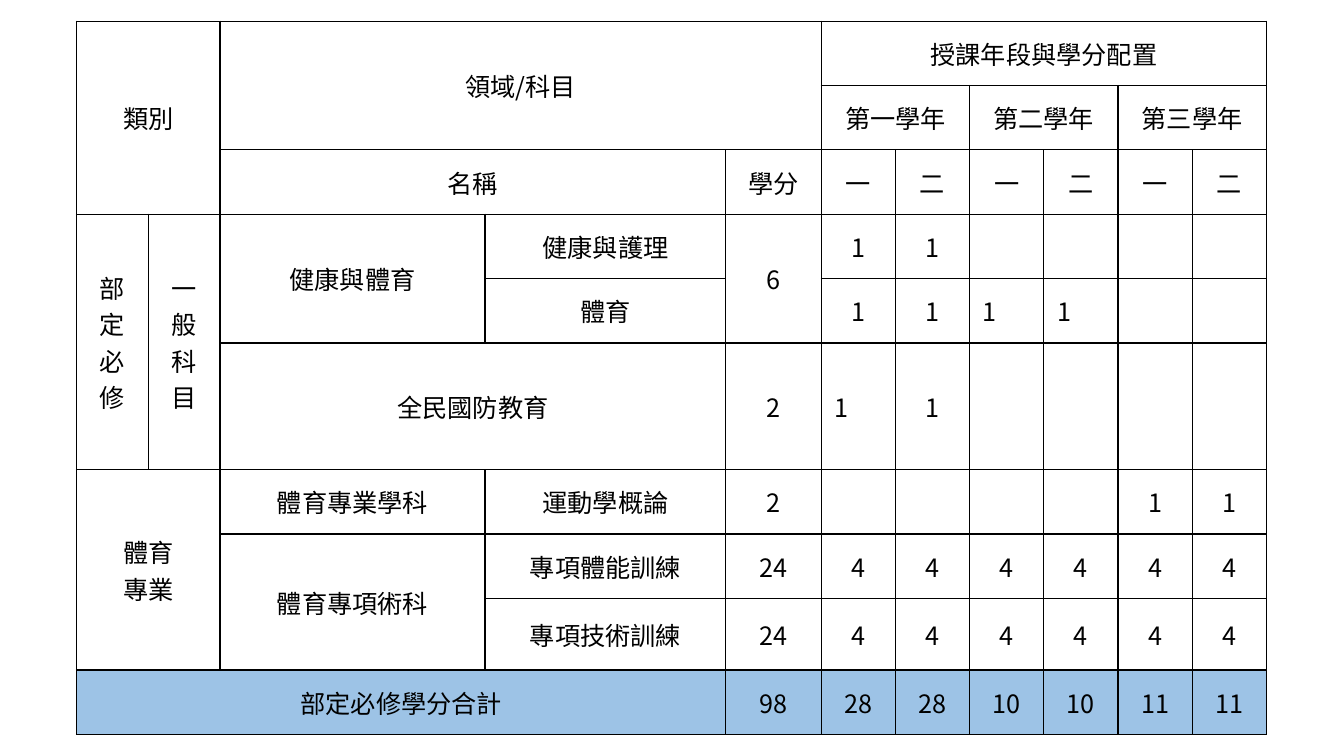
from lxml import etree
from pptx import Presentation
from pptx.dml.color import RGBColor
from pptx.enum.text import MSO_ANCHOR, PP_ALIGN
from pptx.oxml.ns import qn
from pptx.util import Pt

CENTER = PP_ALIGN.CENTER
MIDDLE = MSO_ANCHOR.MIDDLE
FONT = "Noto Sans CJK SC"
COLORS = {"text": "000000", "border": "000000", "total": "9DC3E6"}

COLUMN_WIDTHS = [51.2, 51.2, 189.4, 172, 68.2] + [53] * 6
ROW_HEIGHTS = [46] * 5 + [90.5, 46, 46, 51.2, 46]

# Each row: category, group, field, subject, credits, then six terms
ROWS = [
    ["類別", "", "領域/科目", "", "", "授課年段與學分配置", "", "", "", "", ""],
    ["", "", "", "", "", "第一學年", "", "第二學年", "", "第三學年", ""],
    ["", "", "名稱", "", "學分"] + ["一", "二"] * 3,
    ["部\n定\n必\n修", "一\n般\n科\n目", "健康與體育", "健康與護理", "6", "1", "1", "", "", "", ""],
    ["", "", "", "體育", "", "1", "1", "1", "1", "", ""],
    ["", "", "全民國防教育", "", "2", "1", "1", "", "", "", ""],
    ["體育\n專業", "", "體育專業學科", "運動學概論", "2", "", "", "", "", "1", "1"],
    ["", "", "體育專項術科", "專項體能訓練", "24"] + ["4"] * 6,
    ["", "", "", "專項技術訓練", "24"] + ["4"] * 6,
    ["部定必修學分合計", "", "", "", "98", "28", "28", "10", "10", "11", "11"],
]

# First row, first column, last row, last column
MERGES = [
    (0, 0, 2, 1), (0, 2, 1, 4), (0, 5, 0, 10),
    (1, 5, 1, 6), (1, 7, 1, 8), (1, 9, 1, 10),
    (2, 2, 2, 3), (3, 0, 5, 0), (3, 1, 5, 1), (3, 2, 4, 2), (3, 4, 4, 4),
    (5, 2, 5, 3), (6, 0, 8, 1), (7, 2, 8, 2), (9, 0, 9, 3),
]
LEFT_SHIFTED = {(4, 7), (4, 8), (5, 5)}
TOTAL_ROW = len(ROWS) - 1


def add_borders(cell):
    properties = cell._tc.get_or_add_tcPr()
    for index, side in enumerate(("lnL", "lnR", "lnT", "lnB")):
        line = etree.Element(qn(f"a:{side}"), w=str(Pt(1)))
        fill = etree.SubElement(line, qn("a:solidFill"))
        etree.SubElement(fill, qn("a:srgbClr"), val=COLORS["border"])
        properties.insert(index, line)


def style_paragraph(paragraph):
    paragraph.alignment = CENTER
    paragraph.font.size = Pt(18)
    paragraph.font.color.rgb = RGBColor.from_string(COLORS["text"])
    paragraph.font.name = FONT
    defaults = paragraph._p.pPr.find(qn("a:defRPr"))
    etree.SubElement(defaults, qn("a:ea"), typeface=FONT)


# Page
deck = Presentation()
deck.slide_width, deck.slide_height = Pt(960), Pt(540)
page = deck.slides.add_slide(deck.slide_layouts[6])

# Curriculum table
frame = page.shapes.add_table(
    len(ROWS), len(COLUMN_WIDTHS), Pt(54.7), Pt(15.1),
    Pt(sum(COLUMN_WIDTHS)), Pt(sum(ROW_HEIGHTS)))
table = frame.table
table.first_row = False
table.horz_banding = False
for column, width in zip(table.columns, COLUMN_WIDTHS):
    column.width = Pt(width)
for row, height in zip(table.rows, ROW_HEIGHTS):
    row.height = Pt(height)

# Cell text, fill and borders
for row_index, texts in enumerate(ROWS):
    for column_index, text in enumerate(texts):
        cell = table.cell(row_index, column_index)
        cell.text = text
        cell.vertical_anchor = MIDDLE
        cell.margin_left = cell.margin_right = cell.margin_top = cell.margin_bottom = 0
        if (row_index, column_index) in LEFT_SHIFTED:
            cell.margin_right = Pt(24)
        if row_index == TOTAL_ROW:
            cell.fill.solid()
            cell.fill.fore_color.rgb = RGBColor.from_string(COLORS["total"])
        else:
            cell.fill.background()
        add_borders(cell)
        for paragraph in cell.text_frame.paragraphs:
            style_paragraph(paragraph)

# Merged cells
for top, left, bottom, right in MERGES:
    table.cell(top, left).merge(table.cell(bottom, right))

deck.save("out.pptx")
